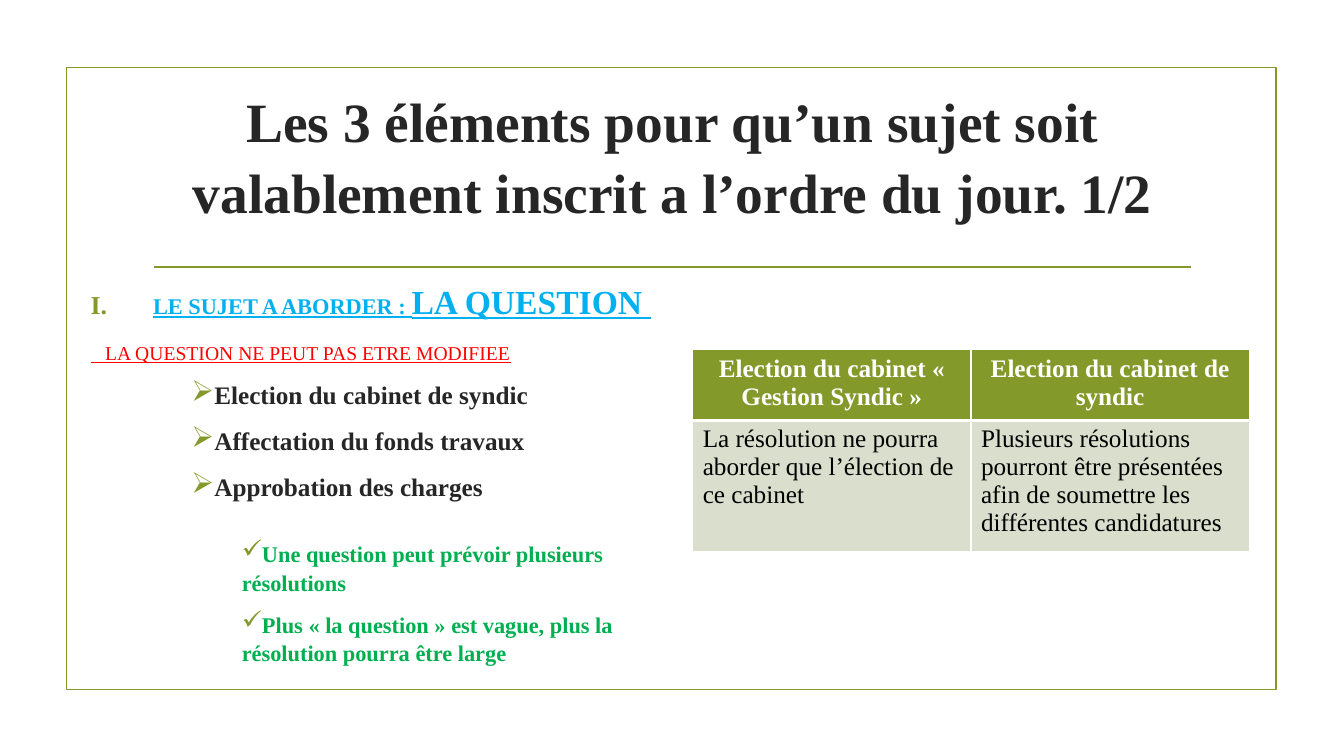
from pptx import Presentation
from pptx import util as u
from pptx.dml.color import RGBColor
from pptx.enum import shapes, text
from pptx.oxml import parse_xml
from pptx.oxml.ns import nsdecls

FONT = "Times New Roman"
COLORS = {
    "olive": "83992A", "pale": "D9DECD", "ink": "262626", "black": "000000",
    "white": "FFFFFF", "blue": "00B0F0", "red": "FF0000", "green": "00B050",
}


def rgb(name):
    return RGBColor.from_string(COLORS[name])


def add_run(paragraph, words, size, color, bold=True, underline=False):
    run = paragraph.add_run()
    run.text = words
    font = run.font
    font.name, font.size, font.bold = FONT, u.Pt(size), bold
    font.underline = underline
    font.color.rgb = rgb(color)


def add_text_frame(slide, left, top, width, height, anchor):
    box = slide.shapes.add_textbox(*map(u.Inches, (left, top, width, height)))
    frame = box.text_frame
    frame.word_wrap = True
    frame.vertical_anchor = anchor
    return frame


def add_frame(slide):
    frame = slide.shapes.add_shape(
        shapes.MSO_SHAPE.RECTANGLE, u.Inches(0.66), u.Inches(0.67),
        u.Inches(12), u.Inches(6.17))
    frame.shadow.inherit = False
    frame.fill.background()
    frame.line.color.rgb = rgb("olive")
    frame.line.width = u.Pt(1.25)


def add_rule(slide, left, right, y):
    rule = slide.shapes.add_connector(
        shapes.MSO_CONNECTOR.STRAIGHT, u.Inches(left), u.Inches(y),
        u.Inches(right), u.Inches(y))
    rule.line.color.rgb = rgb("olive")
    rule.line.width = u.Pt(1.25)
    rule._element.spPr.append(parse_xml(f"<a:effectLst {nsdecls('a')}/>"))


def add_item(frame, runs, before, bullet=None, margin=0, hanging=0):
    """Add a paragraph; bullet is the XML of its mark, runs are add_run arguments."""
    first = frame.paragraphs[0]
    item = frame.add_paragraph() if first.runs else first
    item.line_spacing = 1.07
    item.space_before, item.space_after = u.Pt(before), u.Pt(6)
    props = item._p.get_or_add_pPr()
    props.set("marL", str(u.Inches(margin)))
    props.set("indent", str(-u.Inches(hanging)))
    if bullet:
        marks = (f'<a:buClr {{ns}}><a:srgbClr val="{COLORS["olive"]}"/></a:buClr>',
                 '<a:buSzPct {ns} val="115000"/>', bullet)
        for mark in marks:
            props.append(parse_xml(mark.format(ns=nsdecls("a"))))
    for run in runs:
        add_run(item, *run)


def set_borders(cell, bottom):
    props = cell._tc.get_or_add_tcPr()
    for side, points in (("L", 1), ("R", 1), ("T", 1), ("B", bottom)):
        props.append(parse_xml(
            f'<a:ln{side} {nsdecls("a")} w="{u.Pt(points)}"><a:solidFill>'
            f'<a:srgbClr val="{COLORS["white"]}"/></a:solidFill></a:ln{side}>'))


def add_comparison(slide, rows, heights):
    table = slide.shapes.add_table(
        len(rows), len(rows[0]), u.Inches(6.87), u.Inches(3.47),
        u.Inches(5.52), u.Inches(sum(heights))).table
    for r, (row, height) in enumerate(zip(rows, heights)):
        header = r == 0
        table.rows[r].height = u.Inches(height)
        for c, words in enumerate(row):
            cell = table.cell(r, c)
            set_borders(cell, 3 if header else 1)
            cell.fill.solid()
            cell.fill.fore_color.rgb = rgb("olive" if header else "pale")
            paragraph = cell.text_frame.paragraphs[0]
            if header:
                paragraph.alignment = text.PP_ALIGN.CENTER
            add_run(paragraph, words, 18, "white" if header else "black", header)


def main():
    prs = Presentation()
    prs.slide_width, prs.slide_height = u.Inches(13.33), u.Inches(7.5)
    slide = prs.slides.add_slide(prs.slide_layouts[6])

    # Frame and title
    add_frame(slide)
    add_rule(slide, 1.53, 11.81, 2.65)
    title = add_text_frame(slide, 1.42, 0.81, 10.5, 1.43, text.MSO_ANCHOR.MIDDLE)
    heading = title.paragraphs[0]
    heading.alignment = text.PP_ALIGN.CENTER
    heading.line_spacing = 1.07
    add_run(heading, "Les 3 éléments pour qu’un sujet soit valablement inscrit "
                     "a l’ordre du jour. 1/2", 39.6, "ink")

    # Subject, examples and consequences
    body = add_text_frame(slide, 0.8, 3.65, 5.77, 3.01, text.MSO_ANCHOR.BOTTOM)
    add_item(body, [("LE SUJET A ABORDER : ", 16, "blue", True, True),
                    ("LA QUESTION ", 24, "blue", True, True)], 6.7,
             '<a:buAutoNum {ns} type="romanUcPeriod"/>', 0.62, 0.62)
    add_item(body, [("   LA QUESTION NE PEUT PAS ETRE MODIFIEE", 14, "red", False, True)], 6.7)
    for example in ("Election du cabinet de syndic", "Affectation du fonds travaux",
                    "Approbation des charges"):
        add_item(body, [(example, 18, "ink")], 3.6, '<a:buChar {ns} char="➢"/>', 1)
    consequences = (("Une question peut prévoir plusieurs résolutions", 20.5),
                    ("Plus « la question » est vague, plus la résolution pourra être large", 3.2))
    for consequence, before in consequences:
        add_item(body, [(consequence, 16, "green")], before,
                 '<a:buChar {ns} char="✓"/>', 1.5)

    # Comparison of a narrow and a broad question
    add_comparison(slide, [
        ("Election du cabinet « Gestion Syndic »", "Election du cabinet de syndic"),
        ("La résolution ne pourra aborder que l’élection de ce cabinet",
         "Plusieurs résolutions pourront être présentées afin de soumettre "
         "les différentes candidatures"),
    ], (0.65, 1.2))

    prs.save("out.pptx")


if __name__ == "__main__":
    main()
